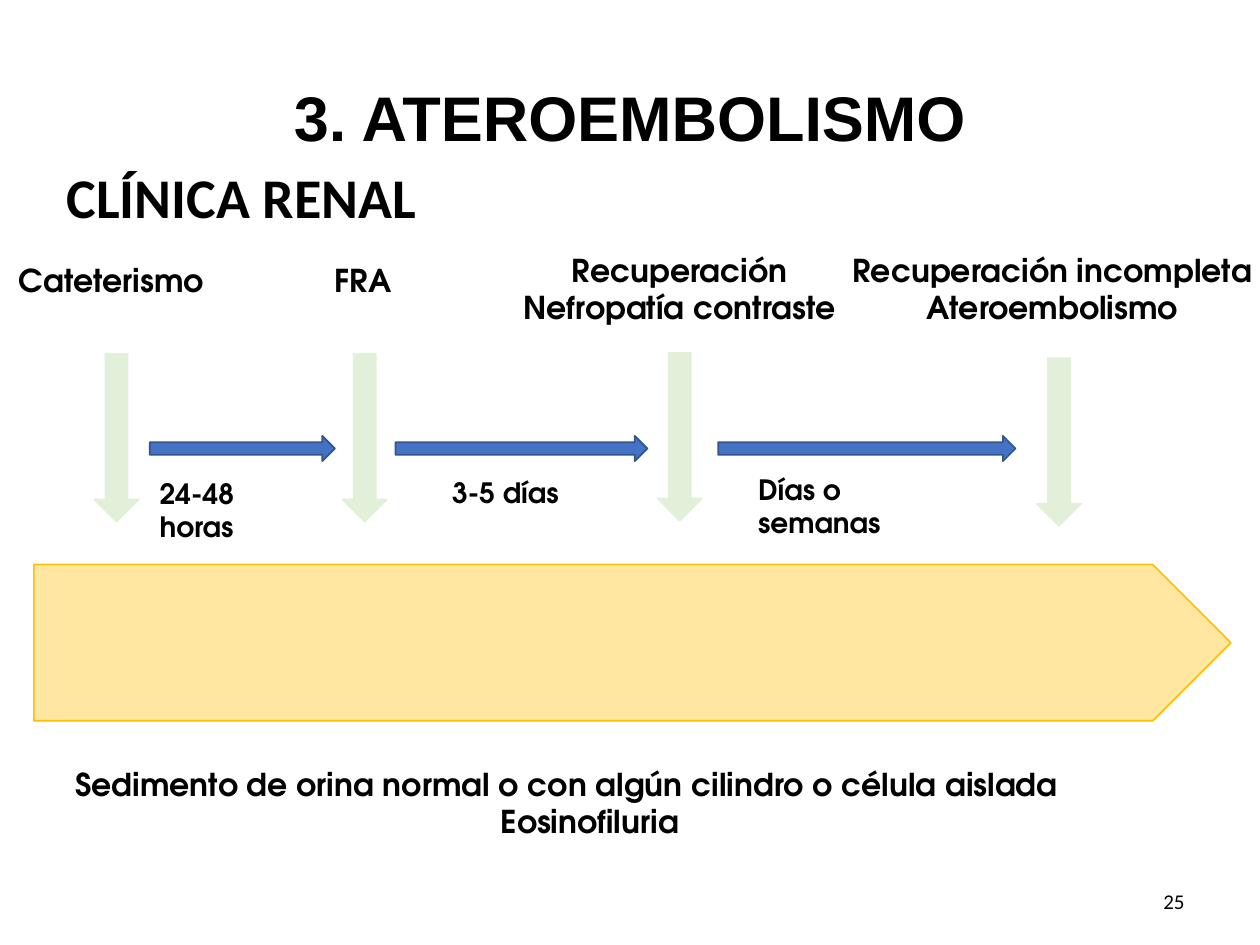
from lxml import etree
from pptx import Presentation
from pptx.dml.color import RGBColor
from pptx.enum import shapes, text
from pptx.oxml import ns
from pptx.util import Pt

COLORS = {"text": "000000", "band": "FFC000", "event": "E2F0D9",
          "interval": "4472C4", "interval_line": "325490"}
LABEL_FONT = "TeX Gyre Adventor"
LEFT, CENTER, RIGHT = text.PP_ALIGN.LEFT, text.PP_ALIGN.CENTER, text.PP_ALIGN.RIGHT


def add_text(slide, box, lines, size, font=LABEL_FONT, bold=True, wrap=True,
             aligns=(LEFT,), anchor=text.MSO_ANCHOR.TOP):
    frame = slide.shapes.add_textbox(*map(Pt, box)).text_frame
    frame.word_wrap = wrap
    frame.vertical_anchor = anchor
    frame.text = "\n".join(lines)
    for paragraph, align in zip(frame.paragraphs, aligns):
        paragraph.alignment = align
        paragraph.font.name = font
        paragraph.font.size = Pt(size)
        paragraph.font.bold = bold
        paragraph.font.color.rgb = RGBColor.from_string(COLORS["text"])


def add_arrow(slide, preset, box, fill, line, alpha=None):
    shape = slide.shapes.add_shape(preset, *map(Pt, box))
    shape.shadow.inherit = False
    shape.fill.solid()
    shape.fill.fore_color.rgb = RGBColor.from_string(COLORS[fill])
    shape.line.color.rgb = RGBColor.from_string(COLORS[line])
    shape.line.width = Pt(1)
    if alpha is not None:
        color = shape._element.spPr.find(ns.qn("a:solidFill"))[0]
        etree.SubElement(color, ns.qn("a:alpha")).set("val", str(alpha * 1000))


def add_headings(slide, box):
    left, top, width, height = box
    add_text(slide, (left, top, width, 90), ["3. ATEROEMBOLISMO"], 36, "Arial",
             aligns=(CENTER,), anchor=text.MSO_ANCHOR.MIDDLE)
    add_text(slide, (left - 5, top + 67.7, width + 21, height - 67.7),
             ["CLÍNICA RENAL"], 32, "Calibri")


def add_timeline(slide, box):
    left, top, width, height = box
    band_height = 89.3
    add_arrow(slide, shapes.MSO_SHAPE.PENTAGON,
              (left, top + height - band_height, width, band_height), "band", "band", 37)

    events = [
        (34.6, 62.6, ["Cateterismo"], (-15.8, 5.8, 121, 29), (LEFT,)),
        (176.4, 62.6, ["FRA"], (164.9, 5.8, 47.5, 29), (LEFT,)),
        (356.4, 62, ["Recuperación", "Nefropatía contraste"],
         (270.7, 0, 196.6, 50.4), (CENTER, CENTER)),
        (573.1, 65, ["Recuperación incompleta", "Ateroembolismo"],
         (460.8, 0, 244.8, 50.4), (LEFT, CENTER)),
    ]
    for x, y, lines, (label_x, label_y, label_width, label_height), aligns in events:
        add_arrow(slide, shapes.MSO_SHAPE.DOWN_ARROW,
                  (left + x, top + y, 25.2, 95.8), "event", "event")
        add_text(slide, (left + label_x, top + label_y, label_width, label_height),
                 lines, 18, wrap=False, aligns=aligns)

    intervals = [
        (66.2, 105.8, "24-48 horas", 64.8, 128.9, 98),
        (206.6, 144, "3-5 días", 231.8, 128.2, 82),
        (391, 169.9, "Días o semanas", 406.8, 126.7, 130),
    ]
    for x, length, label, label_x, label_y, label_width in intervals:
        add_arrow(slide, shapes.MSO_SHAPE.RIGHT_ARROW,
                  (left + x, top + 109.4, length, 14.4), "interval", "interval_line")
        add_text(slide, (left + label_x, top + label_y, label_width, 26), [label], 16)


def add_findings(slide, box):
    add_text(slide, box,
             ["Sedimento de orina normal o con algún cilindro o célula aislada",
              "Eosinofiluria"], 18, aligns=(LEFT, CENTER))


def add_slide_number(slide, box):
    add_text(slide, box, ["25"], 12, "Calibri", bold=False,
             aligns=(RIGHT,), anchor=text.MSO_ANCHOR.MIDDLE)


def main():
    presentation = Presentation()
    presentation.slide_width, presentation.slide_height = Pt(720), Pt(540)
    slide = presentation.slides.add_slide(presentation.slide_layouts[6])
    add_headings(slide, (36, 21.6, 648, 120))
    add_timeline(slide, (19.4, 139.7, 684, 272.2))
    add_findings(slide, (36, 433.4, 602, 50.4))
    add_slide_number(slide, (516.2, 500.4, 167.8, 28.8))
    presentation.save("out.pptx")


if __name__ == "__main__":
    main()
